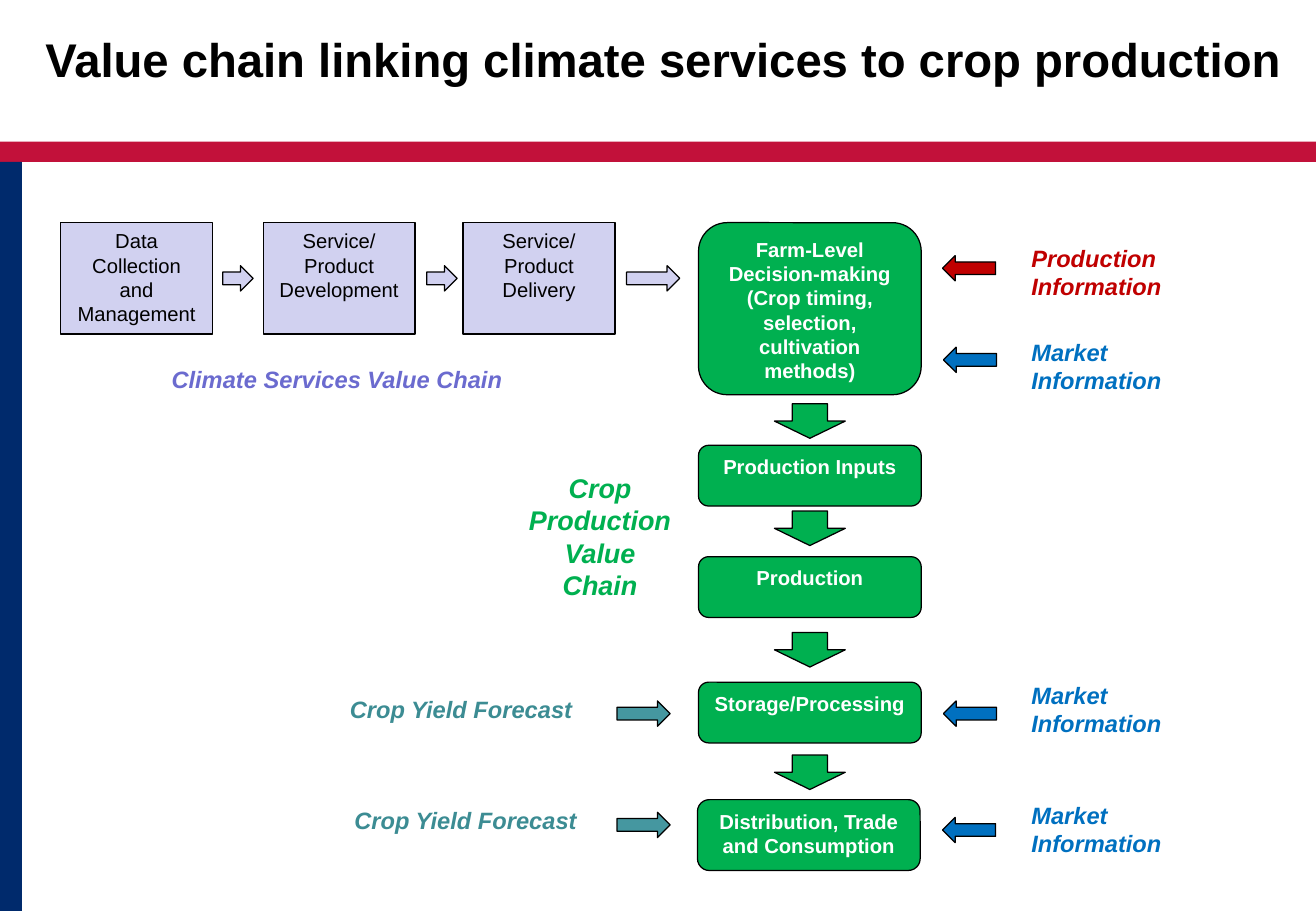
from pptx import Presentation
from pptx import util as u
from pptx.dml.color import RGBColor
from pptx.enum import shapes, text

COLUMNS, ROWS = 130, 90
KINDS = shapes.MSO_SHAPE
ALIGN = text.PP_ALIGN

COLOURS = {
    "black": "000000", "white": "FFFFFF", "band": "C2113A", "side": "002A6C",
    "service": "D1D1F0", "service label": "6B6BCF", "crop": "00B050",
    "market": "0070C0", "production": "C00000",
    "forecast": "4597A0", "forecast label": "3C8C93",
}


class ValueChainPage:
    """Places elements as (left, top, width, height) in grid columns and rows."""

    def __init__(self, deck):
        self.deck = deck
        self.page = deck.slides.add_slide(deck.slide_layouts[6])

    def area(self, left, top, width, height):
        across = self.deck.slide_width / COLUMNS
        down = self.deck.slide_height / ROWS
        return [u.Emu(round(size)) for size in
                (left * across, top * down, width * across, height * down)]

    def colour(self, name):
        return RGBColor.from_string(COLOURS[name])

    def set_text(self, box, words, colour, size, align=ALIGN.CENTER, before=0, **styles):
        frame = box.text_frame
        frame.word_wrap = True
        frame.vertical_anchor = text.MSO_ANCHOR.TOP
        para = frame.paragraphs[0]
        para.alignment = align
        para.space_before = u.Pt(before)
        span = para.add_run()
        span.text = words
        formats = {"name": "Arial", "size": u.Pt(size), **styles}
        for attribute, value in formats.items():
            setattr(span.font, attribute, value)
        span.font.color.rgb = self.colour(colour)

    def shape(self, kind, place, fill, outlined=True):
        box = self.page.shapes.add_shape(kind, *self.area(*place))
        box.shadow.inherit = False
        box.fill.solid()
        box.fill.fore_color.rgb = self.colour(fill)
        if outlined:
            box.line.color.rgb = self.colour("black")
            box.line.width = u.Pt(0.75)
        else:
            box.line.fill.background()
        return box

    def title(self, place, words):
        box = self.page.shapes.add_textbox(*self.area(*place))
        box.text_frame.margin_top = u.Inches(0.08)
        self.set_text(box, words, "black", 28, bold=True)

    def label(self, place, words, colour, size=14, align=ALIGN.CENTER):
        box = self.page.shapes.add_textbox(*self.area(*place))
        self.set_text(box, words, colour, size, align, bold=True, italic=True)

    def service(self, left, words):
        box = self.shape(KINDS.RECTANGLE, (left, 22, 15, 11), "service")
        self.set_text(box, words, "black", 12, before=6)

    def crop_step(self, left, top, height, words):
        box = self.shape(KINDS.ROUNDED_RECTANGLE, (left, top, 22, height), "crop")
        self.set_text(box, words, "white", 12, before=12, bold=True)

    def arrow(self, left, top, fill, length=5.25, turn=0):
        box = self.shape(KINDS.RIGHT_ARROW, (left, top, length, 2.5), fill)
        box.rotation = turn

    def down_arrow(self, top):
        self.shape(KINDS.DOWN_ARROW, (76.5, top, 7, 3.4), "crop")


def build(chain):
    chain.shape(KINDS.RECTANGLE, (0, 14, COLUMNS, 2), "band", outlined=False)
    chain.shape(KINDS.RECTANGLE, (0, 16, 2.16, 74), "side", outlined=False)
    chain.title((3, 2, 125, 8), "Value chain linking climate services to crop production")

    for left, words in (
        (6, "Data Collection and Management"),
        (26, "Service/ Product Development"),
        (45.75, "Service/ Product Delivery"),
    ):
        chain.service(left, words)
    for left, length in ((22, 3), (42.15, 3), (61.9, 5.25)):
        chain.arrow(left, 26.25, "service", length)

    for left, top, height, words in (
        (69, 22, 17, "Farm-Level Decision-making (Crop timing, selection, cultivation methods)"),
        (69, 44, 6, "Production Inputs"),
        (69, 55, 6, "Production"),
        (69, 67.4, 6, "Storage/Processing"),
        (68.9, 79, 7, "Distribution, Trade and Consumption"),
    ):
        chain.crop_step(left, top, height, words)
    for top in (39.9, 50.5, 62.5, 74.6):
        chain.down_arrow(top)

    for topic, colour, label_top, arrow_left, arrow_top in (
        ("Production", "production", 23.5, 93.1, 25.25),
        ("Market", "market", 32.75, 93.2, 34.3),
        ("Market", "market", 66.65, 93.2, 69.25),
        ("Market", "market", 78.55, 93.1, 80.75),
    ):
        chain.label((100.7, label_top, 23, 6.84), f"{topic} Information", colour,
                    align=ALIGN.LEFT)
        chain.arrow(arrow_left, arrow_top, colour, turn=180)

    for left, top, width, arrow_top in ((33.25, 68.1, 24.6, 69.25), (32, 79, 28, 80.25)):
        chain.label((left, top, width, 4.08), "Crop Yield Forecast", "forecast label")
        chain.arrow(60.95, arrow_top, "forecast")

    chain.label((13.4, 35.5, 39.8, 4.08), "Climate Services Value Chain", "service label")
    chain.label((51, 46, 16.55, 14.2), "Crop Production Value Chain", "crop", size=16)


def main():
    deck = Presentation()
    deck.slide_width, deck.slide_height = u.Inches(10.83), u.Inches(7.5)
    build(ValueChainPage(deck))
    deck.save("out.pptx")


if __name__ == "__main__":
    main()
